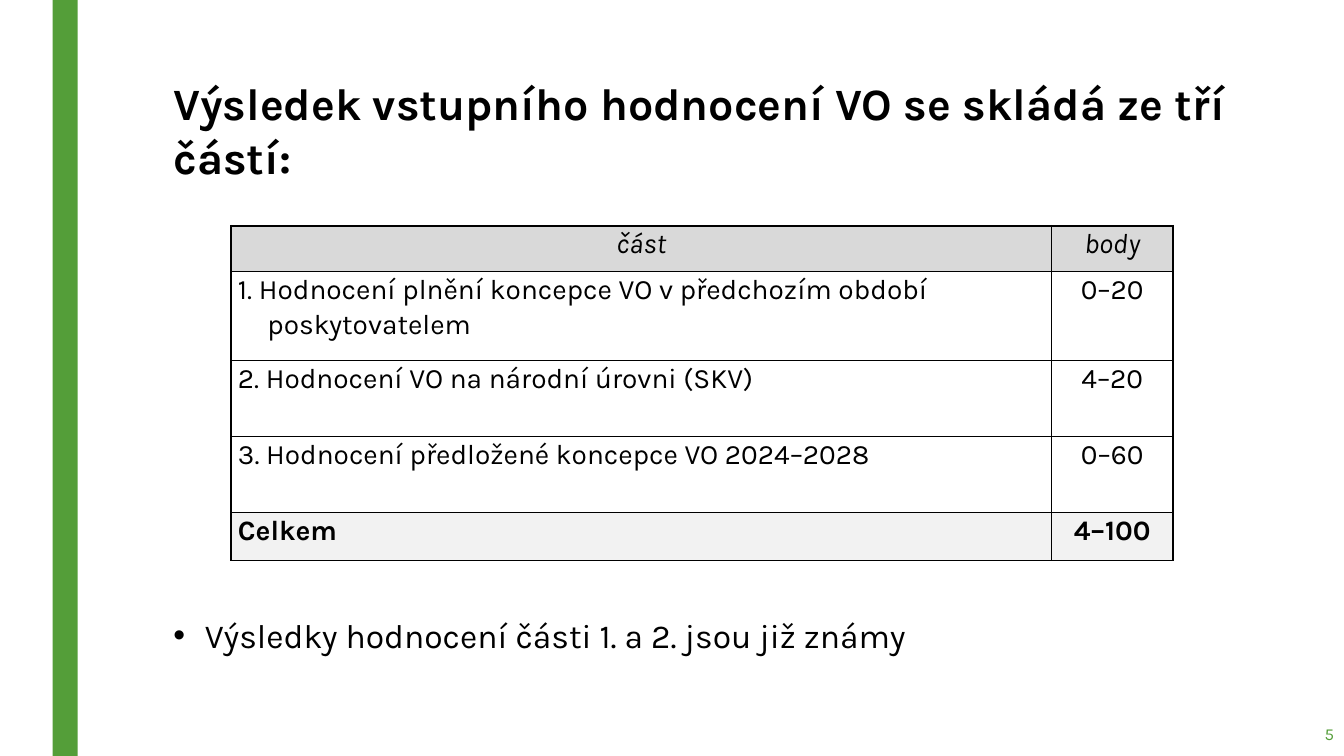
from lxml import etree
from pptx import Presentation
from pptx.dml.color import RGBColor
from pptx.enum import shapes, text
from pptx.oxml import ns
from pptx.util import Pt

COLORS = {"green": "549E39", "black": "000000", "white": "FFFFFF",
          "header": "D9D9D9", "total": "F2F2F2"}
FONT = "Karla"
LEFT, CENTER, RIGHT = text.PP_ALIGN.LEFT, text.PP_ALIGN.CENTER, text.PP_ALIGN.RIGHT
TOP, MIDDLE = text.MSO_ANCHOR.TOP, text.MSO_ANCHOR.MIDDLE

SCORES = [
    ("část", "body"),
    ("1. Hodnocení plnění koncepce VO v předchozím období poskytovatelem", "0–20"),
    ("2. Hodnocení VO na národní úrovni (SKV)", "4–20"),
    ("3. Hodnocení předložené koncepce VO 2024–2028", "0–60"),
    ("Celkem", "4–100"),
]
COLUMN_WIDTHS = (586, 87)
ROW_HEIGHTS = (32.4, 64.1, 54, 54, 34.6)


def rgb(name):
    return RGBColor.from_string(COLORS[name])


def write(frame, content, size, color="black", bold=False, italic=False,
          align=LEFT, spacing=1.0, before=0, after=0, hanging=0, bullet=None):
    """Put one formatted paragraph in a text frame."""
    para = frame.paragraphs[0]
    para.alignment = align
    para.line_spacing = spacing
    para.space_before, para.space_after = Pt(before), Pt(after)
    span = para.add_run()
    span.text = content
    span.font.name, span.font.size = FONT, Pt(size)
    span.font.bold, span.font.italic = bold, italic
    span.font.color.rgb = rgb(color)
    props = para._p.get_or_add_pPr()
    props.set("marL", str(Pt(hanging)))
    props.set("indent", str(-Pt(hanging)))
    if bullet:
        etree.SubElement(props, ns.qn("a:buFont"), typeface="Arial")
        etree.SubElement(props, ns.qn("a:buChar"), char=bullet)


def place(shape, box, anchor=TOP):
    shape.left, shape.top, shape.width, shape.height = (Pt(side) for side in box)
    frame = shape.text_frame
    frame.word_wrap = True
    frame.auto_size = text.MSO_AUTO_SIZE.NONE
    frame.vertical_anchor = anchor
    return frame


def add_side_bar(page, box):
    bar = page.shapes.add_shape(shapes.MSO_SHAPE.RECTANGLE, *(Pt(side) for side in box))
    bar.shadow.inherit = False
    bar.fill.solid()
    bar.fill.fore_color.rgb = rgb("green")
    bar.line.fill.background()


def add_title(page, box):
    write(place(page.shapes.title, box),
          "Výsledek vstupního hodnocení VO se skládá ze tří částí:", 32, bold=True)


def add_note(page, box):
    write(place(page.placeholders[1], box),
          "Výsledky hodnocení části 1. a 2. jsou již známy", 24,
          hanging=22.5, bullet="•")


def add_page_number(page, box):
    frame = place(page.shapes.add_textbox(0, 0, 0, 0), box, MIDDLE)
    write(frame, "5", 12, color="green", align=RIGHT)


def set_borders(cell, widths):
    """Draw the left, right, top and bottom borders of a cell."""
    props = cell._tc.get_or_add_tcPr()
    for index, (side, width) in enumerate(zip("LRTB", widths)):
        line = etree.Element(ns.qn(f"a:ln{side}"), w=str(Pt(width)))
        fill = etree.SubElement(line, ns.qn("a:solidFill"))
        etree.SubElement(fill, ns.qn("a:srgbClr"), val=COLORS["black"])
        props.insert(index, line)


def add_score_table(page, box):
    last_row, last_column = len(SCORES) - 1, len(COLUMN_WIDTHS) - 1
    table = page.shapes.add_table(last_row + 1, last_column + 1,
                                  *(Pt(side) for side in box)).table
    table.first_row = table.horz_banding = False
    for column, width in zip(table.columns, COLUMN_WIDTHS):
        column.width = Pt(width)
    for row, height in zip(table.rows, ROW_HEIGHTS):
        row.height = Pt(height)

    for r, values in enumerate(SCORES):
        for c, value in enumerate(values):
            cell = table.cell(r, c)
            cell.margin_left = cell.margin_right = Pt(5)
            cell.margin_top = cell.margin_bottom = 0
            # Outer edges are heavier than inner ones
            outer = (c == 0, c == last_column, r == 0, r == last_row)
            set_borders(cell, [1.5 if edge else 1 for edge in outer])
            cell.fill.solid()
            cell.fill.fore_color.rgb = rgb({0: "header", last_row: "total"}.get(r, "white"))
            write(cell.text_frame, value, 20, bold=r == last_row, italic=r == 0,
                  align=CENTER if r == 0 or c else LEFT,
                  spacing=1.07, before=3, after=8,
                  hanging=21 if r == 1 and c == 0 else 0)


def main():
    deck = Presentation()
    deck.slide_width, deck.slide_height = Pt(960), Pt(540)
    page = deck.slides.add_slide(deck.slide_layouts[1])
    add_side_bar(page, (37.5, 0, 18, 540))
    add_title(page, (116.6, 50.4, 831.6, 84))
    add_score_table(page, (165, 161.3, sum(COLUMN_WIDTHS), sum(ROW_HEIGHTS)))
    add_note(page, (116.6, 435.6, 680.4, 36))
    add_page_number(page, (834, 508.5, 126, 31.5))
    deck.save("out.pptx")


if __name__ == "__main__":
    main()
